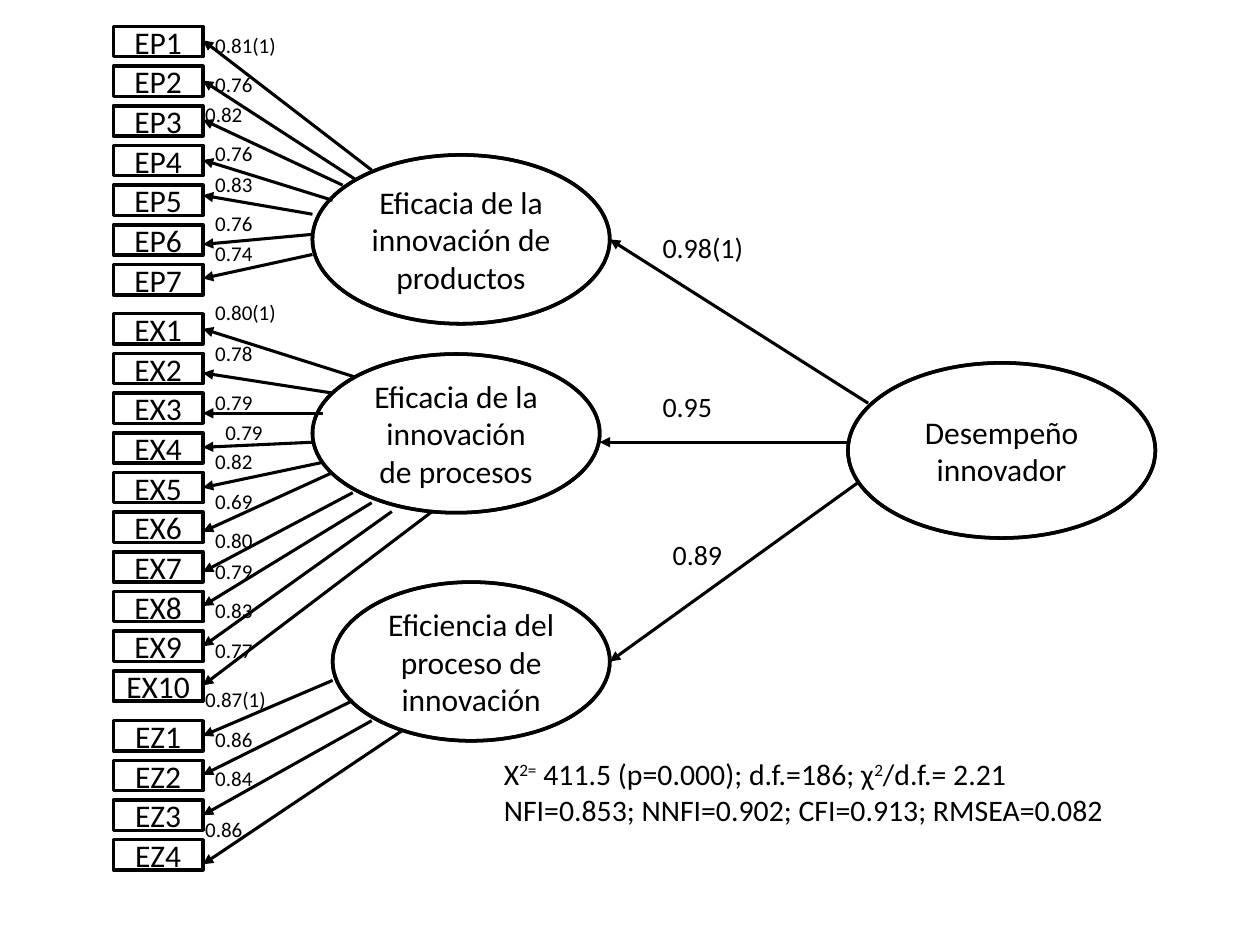
from pptx import Presentation
from pptx.dml.color import RGBColor
from pptx.enum.shapes import MSO_CONNECTOR as Conn, MSO_SHAPE as Shape
from pptx.enum.text import MSO_ANCHOR as Anchor, MSO_AUTO_SIZE as AutoSize, PP_ALIGN as Align
from pptx.oxml.ns import qn
from pptx.util import Inches, Pt
from lxml.etree import SubElement

FACTORS = [
    ("Eficacia de la innovación de procesos", 2.48, 2.81, 2.28, 1.26),
    ("Eficacia de la innovación de productos", 2.48, 1.23, 2.36, 1.34),
    ("Eficiencia del proceso de innovación", 2.64, 4.62, 2.2, 1.26),
    ("Desempeño innovador", 6.73, 2.88, 2.44, 1.39),
]

# prefix, top of first box, (loading, label x, label y, arrow start x, start y, tip y)
GROUPS = [
    ("EP", 0.21, [
        ("0.81(1)", 1.61, 0.21, 2.95, 1.35, 0.32),
        ("0.76", 1.61, 0.52, 2.83, 1.43, 0.64),
        ("0.82", 1.53, 0.76, 2.72, 1.47, 0.95),
        ("0.76", 1.61, 1.07, 2.64, 1.59, 1.27),
        ("0.83", 1.61, 1.31, 2.48, 1.7, 1.55),
        ("0.76", 1.61, 1.62, 2.48, 1.86, 1.94),
        ("0.74", 1.61, 1.86, 2.48, 2.02, 2.21),
    ]),
    ("EX", 2.49, [
        ("0.80(1)", 1.61, 2.33, 2.81, 2.99, 2.61),
        ("0.78", 1.61, 2.65, 2.64, 3.12, 2.96),
        ("0.79", 1.61, 3.04, 2.56, 3.28, 3.28),
        ("0.79", 1.69, 3.28, 2.48, 3.51, 3.55),
        ("0.82", 1.61, 3.51, 2.56, 3.67, 3.87),
        ("0.69", 1.61, 3.83, 2.64, 3.75, 4.22),
        ("0.80", 1.61, 4.14, 2.8, 3.91, 4.54),
        ("0.79", 1.61, 4.38, 2.95, 3.99, 4.81),
        ("0.83", 1.61, 4.69, 3.11, 4.06, 5.13),
        ("0.77", 1.61, 5.01, 3.43, 4.06, 5.44),
    ]),
    ("EZ", 5.72, [
        ("0.87(1)", 1.53, 5.4, 2.64, 5.4, 5.84),
        ("0.86", 1.61, 5.72, 2.8, 5.56, 6.15),
        ("0.84", 1.61, 6.03, 2.95, 5.72, 6.47),
        ("0.86", 1.53, 6.43, 3.19, 5.8, 6.86),
    ]),
]

PATHS = [
    ("0.98(1)", 5.16, 1.78, (6.89, 3.2), (4.84, 1.9)),
    ("0.95", 5.16, 3.04, (6.73, 3.51), (4.76, 3.51)),
    ("0.89", 5.24, 4.22, (6.81, 3.83), (4.84, 5.25)),
]

FIT = [
    [("Χ", False), ("2=", True), (" 411.5 (p=0.000); d.f.=186; χ", False),
     ("2", True), ("/d.f.= 2.21", False)],
    [("NFI=0.853; NNFI=0.902; CFI=0.913; RMSEA=0.082", False)],
]

BOX_X, BOX_W, BOX_H, BOX_STEP = 0.9, 0.71, 0.24, 0.315


def color(value):
    return RGBColor.from_string(value)


class Diagram:
    font = "Calibri"
    ink = "000000"
    paper = "FFFFFF"

    def __init__(self, slide):
        self.s = slide

    def style(self, p, size):
        p.font.name = self.font
        p.font.size = Pt(size)
        p.font.color.rgb = color(self.ink)

    def node(self, kind, text, x, y, w, h):
        sp = self.s.shapes.add_shape(kind, Inches(x), Inches(y), Inches(w), Inches(h))
        sp.shadow.inherit = False
        sp.fill.solid()
        sp.fill.fore_color.rgb = color(self.paper)
        sp.line.color.rgb = color(self.ink)
        sp.line.width = Pt(2)
        tf = sp.text_frame
        tf.word_wrap = True
        tf.vertical_anchor = Anchor.MIDDLE
        p = tf.paragraphs[0]
        p.text = text
        p.alignment = Align.CENTER
        self.style(p, 18)
        return sp

    def factor(self, text, x, y, w, h):
        self.node(Shape.DONUT, text, x, y, w, h).adjustments[0] = 0

    def indicator(self, text, y):
        self.node(Shape.RECTANGLE, text, BOX_X, y, BOX_W, BOX_H)

    def arrow(self, start, end):
        line = self.s.shapes.add_connector(Conn.STRAIGHT, *map(Inches, start + end))
        line.line.color.rgb = color(self.ink)
        line.line.width = Pt(1.75)
        SubElement(line.line._get_or_add_ln(), qn("a:tailEnd"), type="triangle")
        SubElement(line._element.spPr, qn("a:effectLst"))

    def text(self, paragraphs, x, y, w, h, size):
        tf = self.s.shapes.add_textbox(Inches(x), Inches(y), Inches(w), Inches(h)).text_frame
        tf.word_wrap = True
        tf.auto_size = AutoSize.SHAPE_TO_FIT_TEXT
        for i, runs in enumerate(paragraphs):
            p = tf.add_paragraph() if i else tf.paragraphs[0]
            self.style(p, size)
            for text, raised in runs:
                r = p.add_run()
                r.text = text
                if raised:
                    r._r.get_or_add_rPr().set("baseline", "30000")

    def label(self, text, x, y, w, h, size):
        self.text([[(text, False)]], x, y, w, h, size)


def main():
    prs = Presentation()
    prs.slide_width, prs.slide_height = Inches(10), Inches(7.5)
    d = Diagram(prs.slides.add_slide(prs.slide_layouts[6]))

    for factor in FACTORS:
        d.factor(*factor)
    for value, x, y, start, end in PATHS:
        d.arrow(start, end)
        d.label(value, x, y, 1.02, 0.37, 16)
    d.text(FIT, 3.9, 5.95, 5.12, 0.67, 17)

    for prefix, top, rows in GROUPS:
        for i, (loading, x, y, start_x, start_y, tip_y) in enumerate(rows):
            d.indicator(f"{prefix}{i + 1}", top + i * BOX_STEP)
            d.arrow((start_x, start_y), (BOX_X + BOX_W, tip_y))
            d.label(loading, x, y, 0.55 if len(loading) == 4 else 0.79, 0.3, 12)

    prs.save("out.pptx")


if __name__ == "__main__":
    main()
